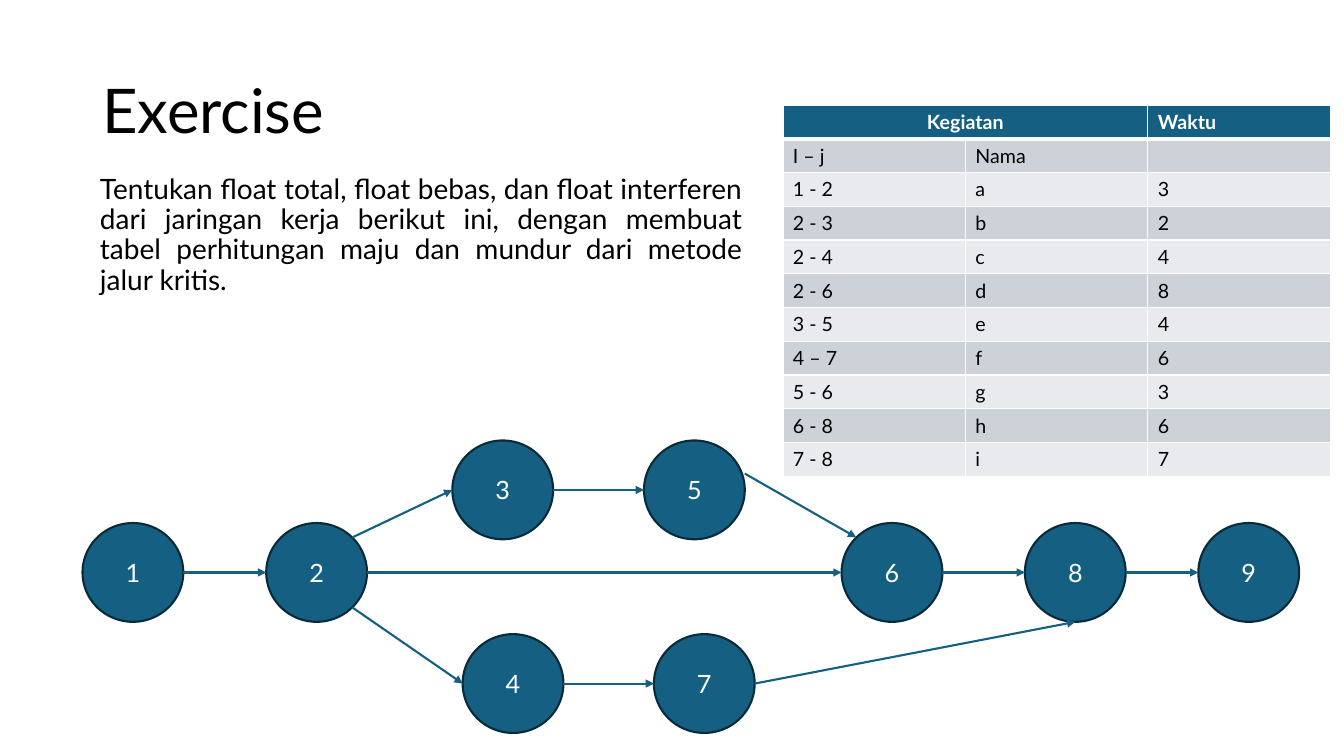
from lxml import etree
from pptx import Presentation
from pptx.dml.color import RGBColor
from pptx.enum.shapes import MSO_CONNECTOR, MSO_SHAPE
from pptx.enum.text import MSO_ANCHOR, PP_ALIGN
from pptx.oxml.ns import qn
from pptx.util import Cm, Pt

STRAIGHT, OVAL = MSO_CONNECTOR.STRAIGHT, MSO_SHAPE.OVAL
TOP, MIDDLE = MSO_ANCHOR.TOP, MSO_ANCHOR.MIDDLE
LEFT, CENTER, JUSTIFY = PP_ALIGN.LEFT, PP_ALIGN.CENTER, PP_ALIGN.JUSTIFY

NODE_W, NODE_H = 2.54, 2.49
UPPER, MAIN, LOWER = 11.1, 13.18, 15.98
NODES = {
    "1": (2.08, MAIN), "2": (6.71, MAIN), "3": (11.4, UPPER),
    "5": (16.23, UPPER), "6": (21.21, MAIN), "8": (25.83, MAIN),
    "9": (30.2, MAIN), "4": (11.66, LOWER), "7": (16.48, LOWER),
}
DIAG = 0.71
EAST, WEST, SOUTH = (1, 0), (-1, 0), (0, 1)
NORTHEAST, SOUTHEAST, NORTHWEST = (DIAG, -DIAG), (DIAG, DIAG), (-DIAG, -DIAG)
ARROWS = [
    ("1", EAST, "2", WEST), ("2", NORTHEAST, "3", WEST),
    ("3", EAST, "5", WEST), ("5", (1, -0.33), "6", NORTHWEST),
    ("2", SOUTHEAST, "4", WEST), ("4", EAST, "7", WEST),
    ("7", EAST, "8", SOUTH), ("6", EAST, "8", WEST),
    ("8", EAST, "9", WEST), ("2", EAST, "6", WEST),
]
ACTIVITIES = [
    ("Kegiatan", "", "Waktu"), ("I – j", "Nama", ""),
    ("1 - 2", "a", "3"), ("2 - 3", "b", "2"), ("2 - 4", "c", "4"),
    ("2 - 6", "d", "8"), ("3 - 5", "e", "4"), ("4 – 7", "f", "6"),
    ("5 - 6", "g", "3"), ("6 - 8", "h", "6"), ("7 - 8", "i", "7"),
]
TASK = ("Tentukan float total, float bebas, dan float interferen dari jaringan "
        "kerja berikut ini, dengan membuat tabel perhitungan maju dan mundur "
        "dari metode jalur kritis.")


def rgb(value):
    return RGBColor.from_string(value)


def anchor_point(node, direction):
    x, y = NODES[node]
    dx, dy = direction
    return Cm(x + NODE_W / 2 * (1 + dx)), Cm(y + NODE_H / 2 * (1 + dy))


class SlideBuilder:
    """Draws styled elements on one slide."""

    font, teal, outline = "Lato", "156082", "092A39"
    black, white = "000000", "FFFFFF"
    bands = ("E8EAED", "CCD2D8")

    def __init__(self, slide):
        self.shapes = slide.shapes

    def add_text(self, tf, text, size, color, align=LEFT, bold=False):
        p = tf.paragraphs[0]
        p.alignment = align
        if not text:
            etree.SubElement(p._p, qn("a:endParaRPr"), sz=str(size * 100))
            return p
        r = p.add_run()
        r.text = text
        r.font.name, r.font.size, r.font.bold = self.font, Pt(size), bold
        r.font.color.rgb = rgb(color)
        return p

    def text(self, box, text, size, align=LEFT, anchor=TOP, before=0):
        tf = self.shapes.add_textbox(*map(Cm, box)).text_frame
        tf.word_wrap = True
        tf.vertical_anchor = anchor
        p = self.add_text(tf, text, size, self.black, align)
        p.line_spacing = 0.9
        p.space_before = Pt(before)

    def node(self, label, x, y):
        sp = self.shapes.add_shape(OVAL, Cm(x), Cm(y), Cm(NODE_W), Cm(NODE_H))
        sp.shadow.inherit = False
        sp.fill.solid()
        sp.fill.fore_color.rgb = rgb(self.teal)
        sp.line.color.rgb = rgb(self.outline)
        sp.line.width = Pt(1.5)
        sp.text_frame.vertical_anchor = MIDDLE
        self.add_text(sp.text_frame, label, 18, self.white, CENTER)

    def arrow(self, begin, end):
        cxn = self.shapes.add_connector(STRAIGHT, *begin, *end)
        cxn.line.color.rgb = rgb(self.teal)
        cxn.line.width = Pt(1.5)
        sp_pr = cxn._element.spPr
        etree.SubElement(sp_pr.find(qn("a:ln")), qn("a:tailEnd"), type="triangle")
        etree.SubElement(sp_pr, qn("a:effectLst"))

    def borders(self, cell, bottom):
        tc_pr = cell._tc.get_or_add_tcPr()
        for side, width in (("L", 1), ("R", 1), ("T", 1), ("B", bottom)):
            ln = etree.SubElement(tc_pr, qn(f"a:ln{side}"), w=str(Pt(width)))
            fill = etree.SubElement(ln, qn("a:solidFill"))
            etree.SubElement(fill, qn("a:srgbClr"), val=self.white)

    def table(self, x, y, col_w, row_h, rows):
        n_rows, n_cols = len(rows), len(rows[0])
        frame = self.shapes.add_table(n_rows, n_cols, Cm(x), Cm(y),
                                      Cm(col_w * n_cols), Cm(row_h * n_rows))
        table = frame.table
        for col in table.columns:
            col.width = Cm(col_w)
        for i, values in enumerate(rows):
            table.rows[i].height = Cm(row_h)
            header = i == 0
            for j, value in enumerate(values):
                cell = table.cell(i, j)
                self.borders(cell, 3 if header else 1)
                cell.fill.solid()
                cell.fill.fore_color.rgb = rgb(self.teal if header else self.bands[i % 2])
                self.add_text(cell.text_frame, value, 14,
                              self.white if header else self.black,
                              CENTER if header and j == 0 else LEFT, header)
        table.cell(0, 0).merge(table.cell(0, 1))


def main():
    prs = Presentation()
    prs.slide_width, prs.slide_height = Cm(33.87), Cm(19.05)
    s = SlideBuilder(prs.slides.add_slide(prs.slide_layouts[6]))
    s.text((2.33, 1.01, 29.21, 3.68), "Exercise", 44, anchor=MIDDLE)
    s.text((2.27, 4.29, 16.69, 12.09), TASK, 20, JUSTIFY, before=10)
    for label, (x, y) in NODES.items():
        s.node(label, x, y)
    for start, leave, stop, enter in ARROWS:
        s.arrow(anchor_point(start, leave), anchor_point(stop, enter))
    s.table(19.73, 2.65, 4.6, 0.85, ACTIVITIES)
    prs.save("out.pptx")


if __name__ == "__main__":
    main()
